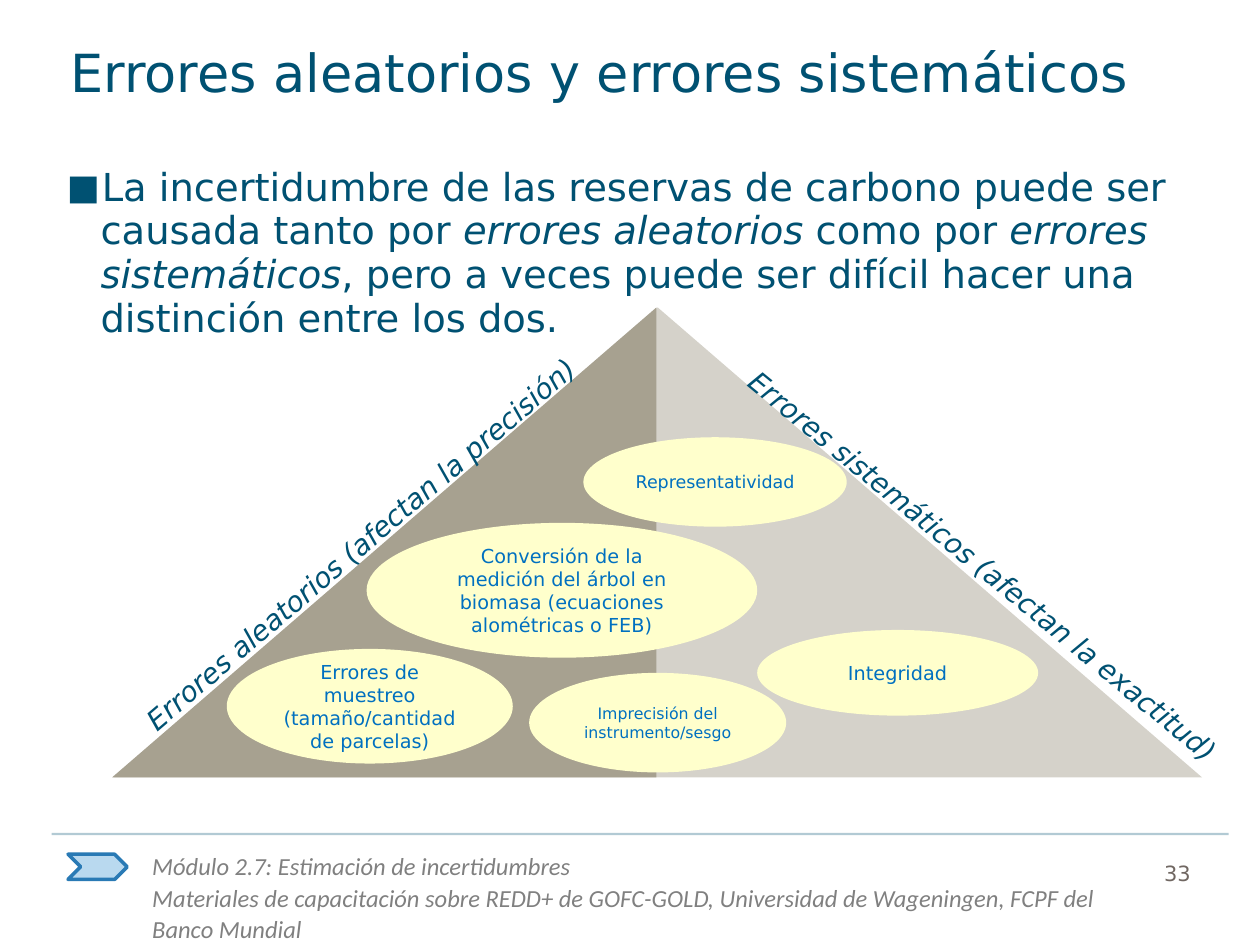
from lxml.etree import SubElement
from pptx import Presentation
from pptx.dml.color import RGBColor
from pptx.enum.shapes import MSO_CONNECTOR as Connector, MSO_SHAPE as Shape
from pptx.enum.text import MSO_ANCHOR as Anchor, PP_ALIGN as Align
from pptx.oxml.ns import qn
from pptx.util import Inches, Pt

COLUMNS, ROWS = 100, 75
WIDTH, HEIGHT = Inches(10), Inches(7.5)
SANS, FOOTER_FONT = "DejaVu Sans", "Calibri"
NAVY, GREY, BLUE = "005172", "808080", "0070C0"
ELLIPSES = [
    ("Errores de muestreo (tamaño/cantidad de parcelas)", 11, (18, 51.5, 22.7, 9.1)),
    ("Representatividad", 10, (46.3, 34.7, 20.9, 7.1)),
    ("Conversión de la medición del árbol en biomasa (ecuaciones alométricas o FEB)",
     11, (29.1, 41.5, 31, 10.7)),
    ("Integridad", 11, (60.1, 50, 22.3, 6.8)),
    ("Imprecisión del instrumento/sesgo", 9, (42, 53.4, 20.4, 7.9)),
]


def color(value):
    return RGBColor.from_string(value)


def place(left, top, width, height):
    return (int(WIDTH * left / COLUMNS), int(HEIGHT * top / ROWS),
            int(WIDTH * width / COLUMNS), int(HEIGHT * height / ROWS))


def add_run(paragraph, text, size, ink, font=SANS, italic=False):
    run = paragraph.add_run()
    run.text = text
    run.font.name = font
    run.font.size = Pt(size)
    run.font.italic = italic
    run.font.color.rgb = color(ink)


def add_text(slide, area, paragraphs, size, ink=NAVY, font=SANS, spacing=18,
             align=Align.LEFT, rotation=0):
    box = slide.shapes.add_textbox(*place(*area))
    box.rotation = rotation
    frame = box.text_frame
    frame.word_wrap = True
    for index, runs in enumerate(paragraphs):
        paragraph = frame.add_paragraph() if index else frame.paragraphs[0]
        paragraph.alignment = align
        paragraph.line_spacing = Pt(spacing)
        for text, italic in runs:
            add_run(paragraph, text, size, ink, font, italic)
    return frame


def add_bullet(paragraph, symbol, ink, percent, indent):
    properties = paragraph._p.get_or_add_pPr()
    properties.set("marL", str(indent))
    properties.set("indent", str(-indent))
    bullet_color = SubElement(properties, qn("a:buClr"))
    SubElement(bullet_color, qn("a:srgbClr"), val=ink)
    SubElement(properties, qn("a:buSzPct"), val=str(percent * 1000))
    SubElement(properties, qn("a:buFont"), typeface=SANS)
    SubElement(properties, qn("a:buChar"), char=symbol)


def add_figure(slide, kind, area, fill, line=None, mirrored=False):
    shape = slide.shapes.add_shape(kind, *place(*area))
    shape.shadow.inherit = False
    shape.fill.solid()
    shape.fill.fore_color.rgb = color(fill)
    if line:
        shape.line.color.rgb = color(line)
        shape.line.width = Pt(2)
    else:
        shape.line.fill.background()
    if mirrored:
        shape._element.spPr.find(qn("a:xfrm")).set("flipH", "1")
    return shape


def add_ellipse(slide, text, size, area):
    frame = add_figure(slide, Shape.OVAL, area, "FFFFCC").text_frame
    frame.word_wrap = True
    frame.vertical_anchor = Anchor.MIDDLE
    paragraph = frame.paragraphs[0]
    paragraph.alignment = Align.CENTER
    add_run(paragraph, text, size, BLUE)


def add_rule(slide, left, right, row, ink, opacity):
    x, y, length, _ = place(left, row, right - left, 0)
    rule = slide.shapes.add_connector(Connector.STRAIGHT, x, y, x + length, y)
    rule.line.color.rgb = color(ink)
    rule.line.width = Pt(1.25)
    properties = rule._element.spPr
    tint = properties.find(".//" + qn("a:srgbClr"))
    SubElement(tint, qn("a:alpha"), val=str(opacity * 1000))
    SubElement(properties, qn("a:effectLst"))


def add_footer(slide):
    add_text(slide, (11.1, 66.9, 79.4, 8.6), [
        [("Módulo 2.7: Estimación de incertidumbres", True)],
        [("Materiales de capacitación sobre REDD+ de GOFC-GOLD, Universidad de "
          "Wageningen, FCPF del Banco Mundial", True)],
    ], 14, GREY, FOOTER_FONT)
    add_figure(slide, Shape.CHEVRON, (5.4, 67.8, 4.7, 2), "B9D9EF", "297AB5")
    add_text(slide, (91.4, 67.3, 6.1, 3.3), [[("33", False)]], 12, "706762")
    add_rule(slide, 4.1, 97.5, 66.2, NAVY, 30)


def add_heading(slide):
    title = [("Errores aleatorios y errores sistemáticos", False)]
    frame = add_text(slide, (5.4, 2.5, 92.3, 9.2), [title], 30, spacing=40)
    frame.margin_left, frame.margin_top = Inches(0.02), 0
    frame.margin_bottom = Inches(0.35)
    frame.vertical_anchor = Anchor.BOTTOM


def add_body(slide):
    frame = add_text(slide, (4.2, 12.6, 92.5, 45.8), [[
        ("La incertidumbre de las reservas de carbono puede ser causada tanto por ", False),
        ("errores aleatorios", True),
        (" como por ", False),
        ("errores sistemáticos", True),
        (", pero a veces puede ser difícil hacer una distinción entre los dos.", False),
    ]], 22, spacing=25)
    add_bullet(frame.paragraphs[0], "▪", NAVY, 140, Inches(0.28))


def add_pyramid(slide):
    add_figure(slide, Shape.ISOSCELES_TRIANGLE, (9, 24.4, 86.4, 37.3), "D5D2CA")
    add_figure(slide, Shape.RIGHT_TRIANGLE, (8.9, 24.4, 43.2, 37.3), "A7A190", mirrored=True)
    add_text(slide, (-3.7, 40.5, 64.6, 5.4),
             [[("Errores aleatorios (afectan la precisión)", True)]],
             16, spacing=25, align=Align.CENTER, rotation=319.4)
    add_text(slide, (53.4, 42.8, 50.7, 4.8),
             [[("Errores sistemáticos (afectan la exactitud)", True)]],
             16, spacing=25, rotation=39.4)
    for text, size, area in ELLIPSES:
        add_ellipse(slide, text, size, area)


def main():
    presentation = Presentation()
    presentation.slide_width, presentation.slide_height = WIDTH, HEIGHT
    slide = presentation.slides.add_slide(presentation.slide_layouts[6])
    add_footer(slide)
    add_heading(slide)
    add_body(slide)
    add_pyramid(slide)
    presentation.save("out.pptx")


if __name__ == "__main__":
    main()
